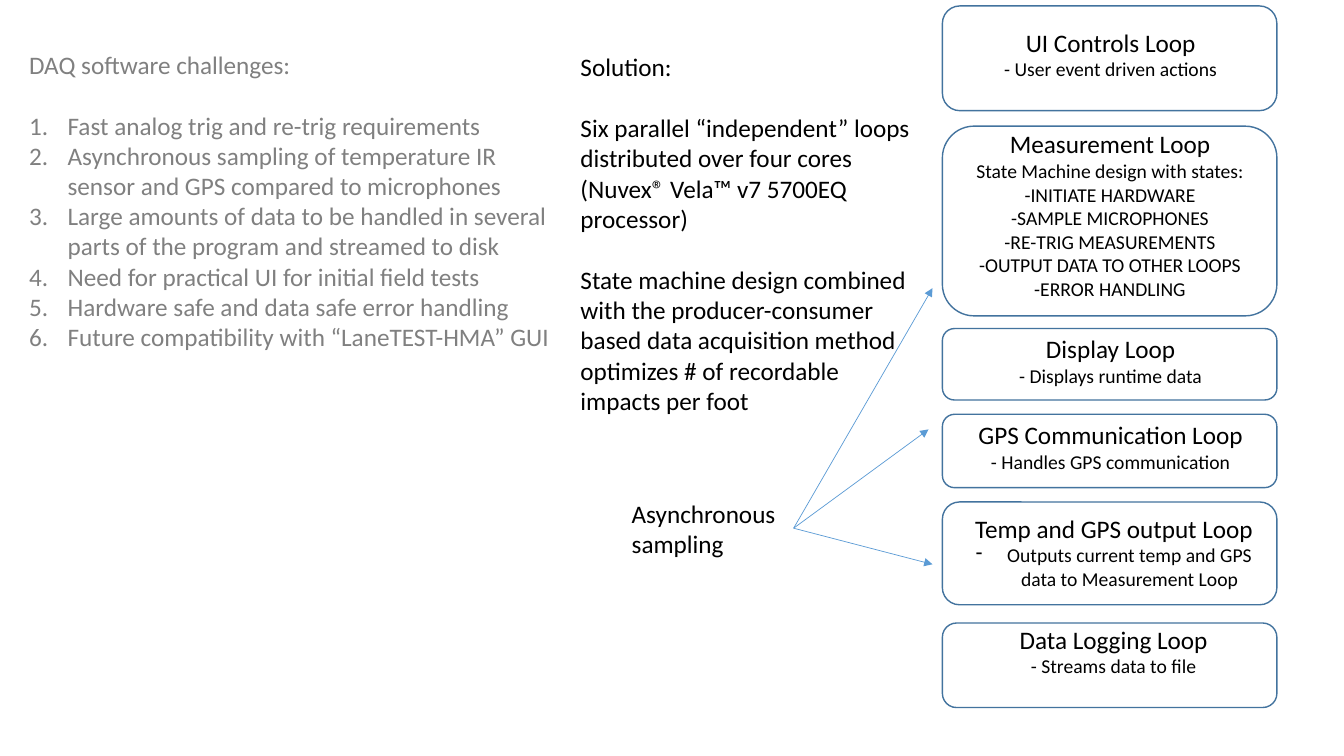
"""Builds the slide on data acquisition challenges and the parallel loop solution."""
from lxml.etree import SubElement
from pptx import Presentation
from pptx.dml.color import RGBColor
from pptx.enum.shapes import MSO_CONNECTOR, MSO_SHAPE
from pptx.enum.text import MSO_ANCHOR, MSO_AUTO_SIZE, PP_ALIGN
from pptx.oxml.ns import qn
from pptx.util import Cm, Pt

BLACK = RGBColor(0x00, 0x00, 0x00)
GRAY = RGBColor(0x80, 0x80, 0x80)
OUTLINE_BLUE = RGBColor(0x43, 0x73, 0x9E)
ARROW_BLUE = RGBColor(0x5B, 0x9B, 0xD5)
FONT = "Calibri"
HEADING_SIZE, DETAIL_SIZE = 18, 14
BLANK_LINE = 22
LOOP_LEFT, LOOP_WIDTH = 23.75, 8.43
SAMPLING_ORIGIN = (20, 13.31)
ARROW_TARGETS = [(23.5, 7.26), (23.5, 14.22), (23.4, 10.82)]

CHALLENGES = [
    "Fast analog trig and re-trig requirements",
    "Asynchronous sampling of temperature IR sensor and GPS compared to microphones",
    "Large amounts of data to be handled in several parts of the program and streamed to disk",
    "Need for practical UI for initial field tests",
    "Hardware safe and data safe error handling",
    "Future compatibility with “LaneTEST-HMA” GUI",
]
SOLUTION = [
    "Solution:",
    "Six parallel “independent” loops distributed over four cores "
    "(Nuvex® Vela™ v7 5700EQ processor)",
    "State machine design combined with the producer-consumer based data "
    "acquisition method optimizes # of recordable impacts per foot",
]
# Each loop: outline top and height, text area, heading, details
LOOPS = [
    (0.15, 2.64, (25.02, 0.56, 5.94, 1.63), "UI Controls Loop",
     ["- User event driven actions"]),
    (3.18, 4.78, (24.28, 3.12, 7.39, 4.62), "Measurement Loop",
     ["State Machine design with states:", "-INITIATE HARDWARE",
      "-SAMPLE MICROPHONES", "-RE-TRIG MEASUREMENTS",
      "-OUTPUT DATA TO OTHER LOOPS", "-ERROR HANDLING"]),
    (8.28, 1.8, (25.4, 8.28, 5.18, 1.63), "Display Loop",
     ["- Displays runtime data"]),
    (10.44, 1.85, (24.36, 10.44, 7.26, 1.63), "GPS Communication Loop",
     ["- Handles GPS communication"]),
    (15.7, 2.13, (24, 15.6, 8.13, 1.63), "Data Logging Loop",
     ["- Streams data to file"]),
]
OUTPUT_LOOP = (12.65, 2.59, (24.1, 12.8, 7.95, 2.24), "Temp and GPS output Loop",
               ["Outputs current temp and GPS data to Measurement Loop"])


def set_bullet(paragraph, indent, tag, **attributes):
    """Give a paragraph a hanging bullet or number."""
    properties = paragraph._p.get_or_add_pPr()
    properties.set("marL", str(Cm(indent)))
    properties.set("indent", str(-Cm(indent)))
    SubElement(properties, qn(tag), attributes)


def style(paragraph, size=HEADING_SIZE, color=BLACK, align=PP_ALIGN.LEFT, before=0):
    """Set spacing, alignment and font of a paragraph."""
    paragraph.alignment = align
    paragraph.space_before = Pt(before)
    paragraph.font.name = FONT
    paragraph.font.size = Pt(size)
    paragraph.font.color.rgb = color


def write(frame, lines, wrap=True):
    """Write lines into a top-anchored frame and return its paragraphs."""
    frame.text = "\n".join(lines)
    frame.word_wrap = wrap
    frame.auto_size = MSO_AUTO_SIZE.NONE
    frame.vertical_anchor = MSO_ANCHOR.TOP
    return frame.paragraphs


def place(placeholder, left, top, width, height):
    """Move and size a placeholder."""
    placeholder.left, placeholder.top = Cm(left), Cm(top)
    placeholder.width, placeholder.height = Cm(width), Cm(height)


def add_text(slide, area, lines, wrap=True):
    """Add a text box and return its paragraphs."""
    box = slide.shapes.add_textbox(*map(Cm, area))
    return write(box.text_frame, lines, wrap)


def add_challenges(slide):
    """Fill the title and the numbered list."""
    title, body = slide.placeholders
    place(title, 0.48, 1.12, 13.67, 1.1)
    place(body, 0.48, 2.64, 13.67, 8.74)
    style(write(title.text_frame, ["DAQ software challenges:"])[0], color=GRAY)
    for challenge in write(body.text_frame, CHALLENGES):
        set_bullet(challenge, 0.97, "a:buAutoNum", type="arabicPeriod")
        style(challenge, color=GRAY)


def add_solution(slide):
    """Add the solution text in the middle column."""
    for index, paragraph in enumerate(add_text(slide, (14.38, 1.17, 8.86, 9.5), SOLUTION)):
        style(paragraph, before=BLANK_LINE if index else 0)


def add_loop(slide, top, height, text_area, heading, details, dashed=False):
    """Add one outlined loop with its heading and details."""
    outline = slide.shapes.add_shape(
        MSO_SHAPE.ROUNDED_RECTANGLE, Cm(LOOP_LEFT), Cm(top), Cm(LOOP_WIDTH), Cm(height))
    outline.shadow.inherit = False
    outline.fill.background()
    outline.line.color.rgb = OUTLINE_BLUE
    outline.line.width = Pt(1)
    first, *rest = add_text(slide, text_area, [heading, *details], wrap=dashed)
    style(first, align=PP_ALIGN.CENTER)
    for detail in rest:
        if dashed:
            set_bullet(detail, 0.79, "a:buChar", char="-")
        style(detail, DETAIL_SIZE, align=PP_ALIGN.CENTER)


def add_arrow(slide, start, end):
    """Add a thin arrow between two points."""
    arrow = slide.shapes.add_connector(MSO_CONNECTOR.STRAIGHT, *map(Cm, start + end))
    arrow.line.color.rgb = ARROW_BLUE
    arrow.line.width = Pt(0.5)
    SubElement(arrow.line._get_or_add_ln(), qn("a:tailEnd"), type="triangle")
    SubElement(arrow._element.spPr, qn("a:effectLst"))


def add_sampling(slide):
    """Add the sampling label and its arrows to the loops."""
    for line in add_text(slide, (15.67, 12.42, 4.32, 1.8), ["Asynchronous", "sampling"], False):
        style(line)
    for target in ARROW_TARGETS:
        add_arrow(slide, SAMPLING_ORIGIN, target)


def main():
    """Build and save the slide."""
    presentation = Presentation()
    presentation.slide_width, presentation.slide_height = Cm(33.87), Cm(19.05)
    slide = presentation.slides.add_slide(presentation.slide_layouts[1])
    add_challenges(slide)
    add_solution(slide)
    for loop in LOOPS:
        add_loop(slide, *loop)
    add_loop(slide, *OUTPUT_LOOP, dashed=True)
    add_sampling(slide)
    presentation.save("out.pptx")


if __name__ == "__main__":
    main()
